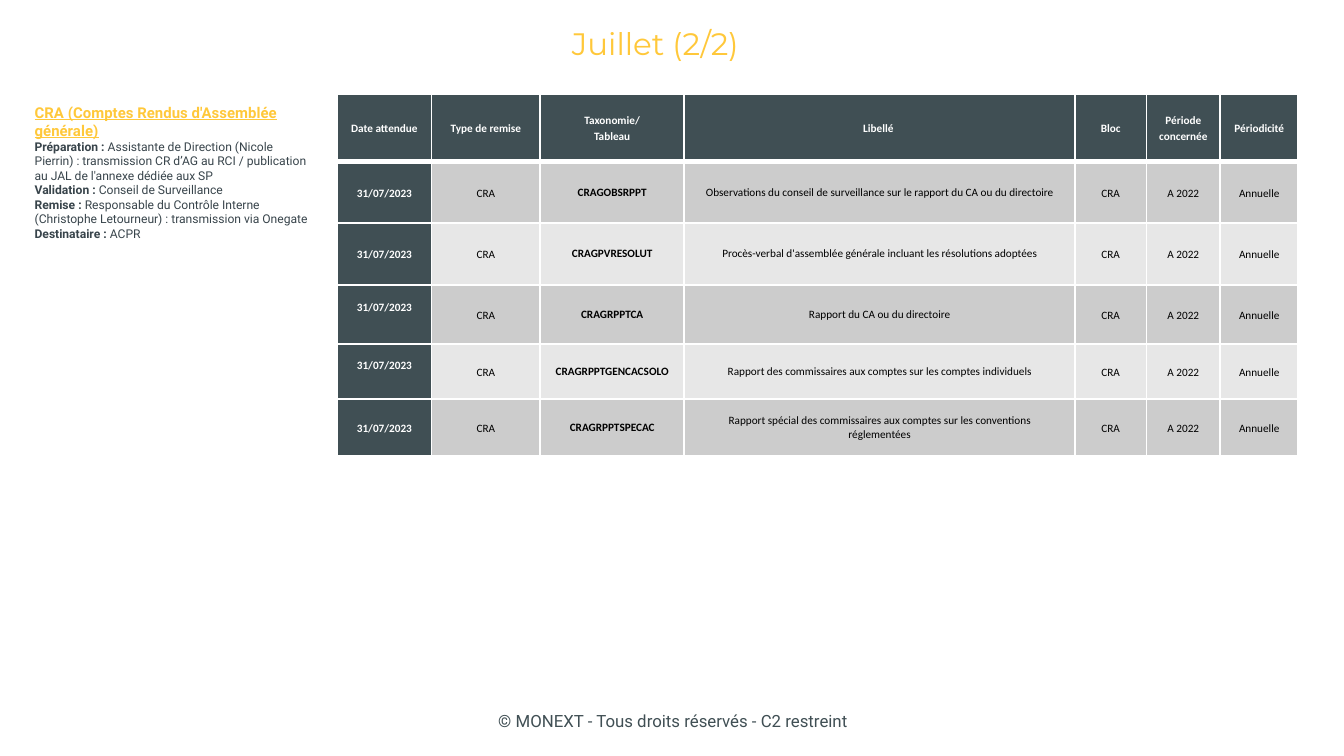
from lxml import etree
from pptx import Presentation
from pptx import util as u
from pptx.dml.color import RGBColor
from pptx.enum import text as t
from pptx.oxml.ns import qn

HUES = {"dark": "404F54", "gold": "FFC83A", "ink": "38444B", "black": "000000",
        "white": "FFFFFF", "grey": "CCCCCC", "pale": "E7E7E7"}

TITLE = "Juillet (2/2)"
FOOT = "© MONEXT - Tous droits réservés - C2 restreint"
TOPIC = "CRA (Comptes Rendus d'Assemblée générale)"
NOTES = [
    ("Préparation : ", "Assistante de Direction (Nicole Pierrin) : transmission CR d’AG "
     "au RCI / publication au JAL de l'annexe dédiée aux SP"),
    ("Validation : ", "Conseil de Surveillance"),
    ("Remise : ", "Responsable du Contrôle Interne (Christophe Letourneur) : "
     "transmission via Onegate"),
    ("Destinataire :", " ACPR"),
]
HEAD = ["Date attendue", "Type de remise", "Taxonomie/\nTableau", "Libellé ", "Bloc",
        "Période concernée", "Périodicité"]
DATE, KIND, SPAN, CYCLE = "31/07/2023", "CRA", "A 2022", "Annuelle"
ITEMS = [
    ("CRAGOBSRPPT",
     "Observations du conseil de surveillance sur le rapport du CA ou du directoire"),
    ("CRAGPVRESOLUT", "Procès-verbal d'assemblée générale incluant les résolutions adoptées"),
    ("CRAGRPPTCA", "Rapport du CA ou du directoire"),
    ("CRAGRPPTGENCACSOLO", "Rapport des commissaires aux comptes sur les comptes individuels"),
    ("CRAGRPPTSPECAC",
     "Rapport spécial des commissaires aux comptes sur les conventions réglementées"),
]
COLS = [0.7, 0.81, 1.07, 2.91, 0.53, 0.55, 0.58]
ROWS = [0.5, 0.46, 0.46, 0.44, 0.41, 0.42]
RAISED = (3, 4)


def write(para, words, size=6, font="Calibri", hue="black", bold=False, line=False,
          align=t.PP_ALIGN.CENTER, gap=None):
    para.alignment = align
    if gap:
        para.line_spacing = gap
    run = para.add_run()
    run.text = words
    face = run.font
    face.size, face.name, face.bold, face.underline = u.Pt(size), font, bold, line
    face.color.rgb = RGBColor.from_string(HUES[hue])


def add_box(slide, place, anchor=t.MSO_ANCHOR.MIDDLE):
    frame = slide.shapes.add_textbox(*map(u.Inches, place)).text_frame
    frame.word_wrap = True
    frame.vertical_anchor = anchor
    return frame


def break_line(para, size):
    para.add_line_break()
    etree.SubElement(para._p[-1], qn("a:rPr"), sz=str(round(size * 100)))


def edge(cell, base):
    props = cell._tc.get_or_add_tcPr()
    for spot, (side, width) in enumerate(zip("LRTB", (1, 1, 1, base))):
        line = etree.Element(qn("a:ln" + side), w=str(u.Pt(width)))
        fill = etree.SubElement(line, qn("a:solidFill"))
        etree.SubElement(fill, qn("a:srgbClr"), val=HUES["white"])
        props.insert(spot, line)


def fill_cell(cell, words, row, col):
    head, code, label = row == 0, row > 0 and col == 2, row > 0 and col == 3
    dark = head or col == 0
    cell.fill.solid()
    shade = "dark" if dark else "grey" if row % 2 else "pale"
    cell.fill.fore_color.rgb = RGBColor.from_string(HUES[shade])
    cell.vertical_anchor = t.MSO_ANCHOR.MIDDLE
    side, top = (0, 0) if code else (0.1, 0.1) if label else (0.03, 0.02)
    cell.margin_left = cell.margin_right = u.Inches(side)
    cell.margin_top = u.Inches(top)
    cell.margin_bottom = u.Inches(0.13 if col == 0 and row in RAISED else top)
    frame = cell.text_frame
    for num, part in enumerate(words.split("\n")):
        para = frame.add_paragraph() if num else frame.paragraphs[0]
        write(para, part, hue="white" if dark else "black", bold=dark or code,
              gap=None if code or label else 1.15)
    edge(cell, 3 if head else 1)


def add_grid(slide):
    data = [HEAD] + [[DATE, KIND, code, label, KIND, SPAN, CYCLE] for code, label in ITEMS]
    place = map(u.Inches, (2.51, 0.7, sum(COLS), sum(ROWS)))
    grid = slide.shapes.add_table(len(ROWS), len(COLS), *place).table
    grid.horz_banding = False
    for col, width in zip(grid.columns, COLS):
        col.width = u.Inches(width)
    for row, height in zip(grid.rows, ROWS):
        row.height = u.Inches(height)
    for row, cells in enumerate(data):
        for col, words in enumerate(cells):
            fill_cell(grid.cell(row, col), words, row, col)


def main():
    deck = Presentation()
    deck.slide_width = u.Inches(10)
    deck.slide_height = deck.slide_width * 9 // 16
    slide = deck.slides.add_slide(deck.slide_layouts[6])

    foot = add_box(slide, (3.42, 5.21, 3.17, 0.3))
    write(foot.paragraphs[0], FOOT, size=9, font="Roboto", hue="dark")
    add_grid(slide)
    title = add_box(slide, (2.1, 0.14, 5.55, 0.36))
    write(title.paragraphs[0], TITLE, size=16.6, font="Montserrat", hue="gold")

    notes = add_box(slide, (0.16, 0.72, 2.26, 1.17), t.MSO_ANCHOR.TOP)
    look = {"font": "Roboto", "align": t.PP_ALIGN.LEFT}
    write(notes.paragraphs[0], TOPIC, size=8, hue="gold", bold=True, line=True, **look)
    para = notes.add_paragraph()
    for num, (lead, rest) in enumerate(NOTES):
        if num:
            break_line(para, 6.5)
        write(para, lead, size=6.5, hue="ink", bold=True, **look)
        write(para, rest, size=6.5, hue="ink", **look)
    deck.save("out.pptx")


if __name__ == "__main__":
    main()
